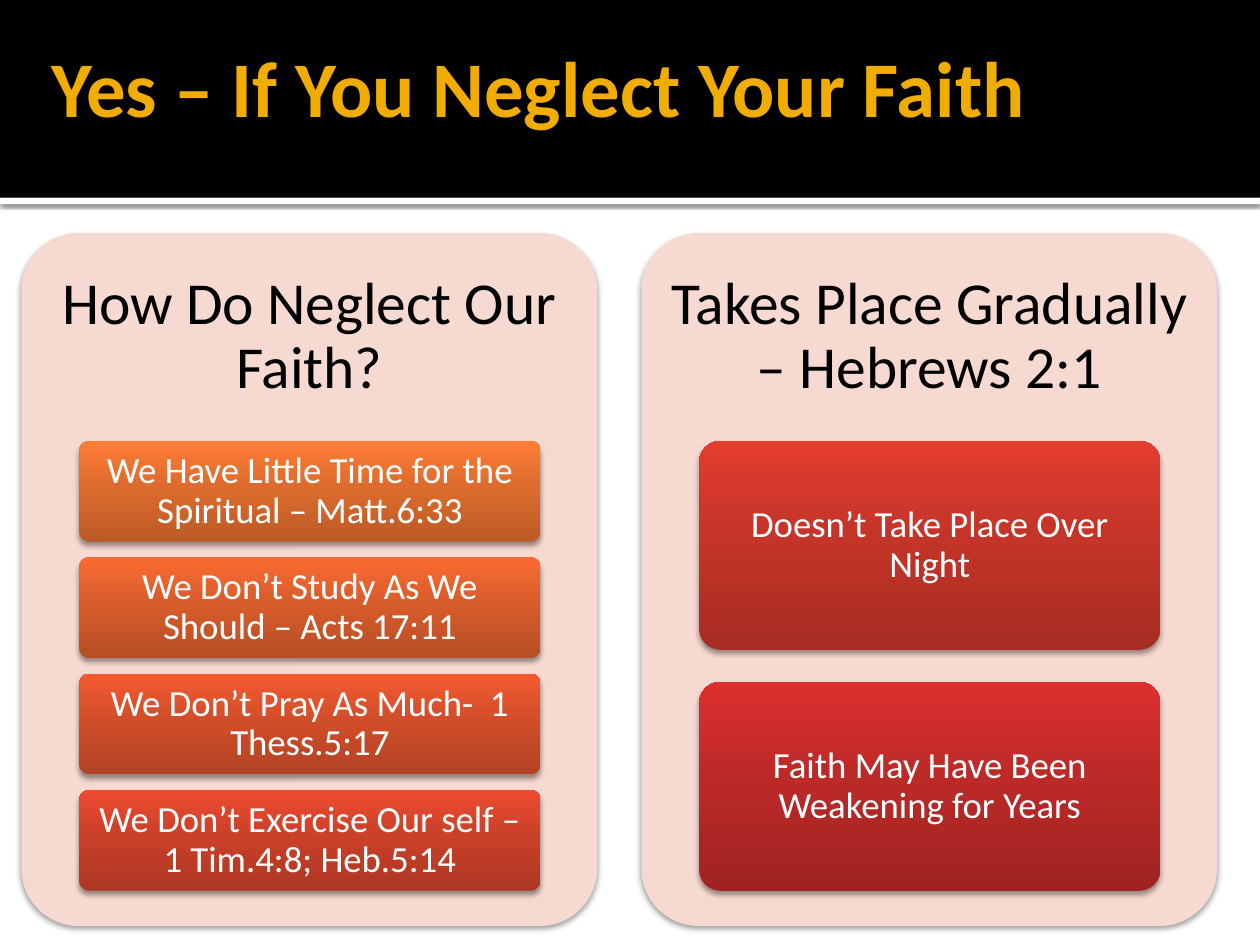
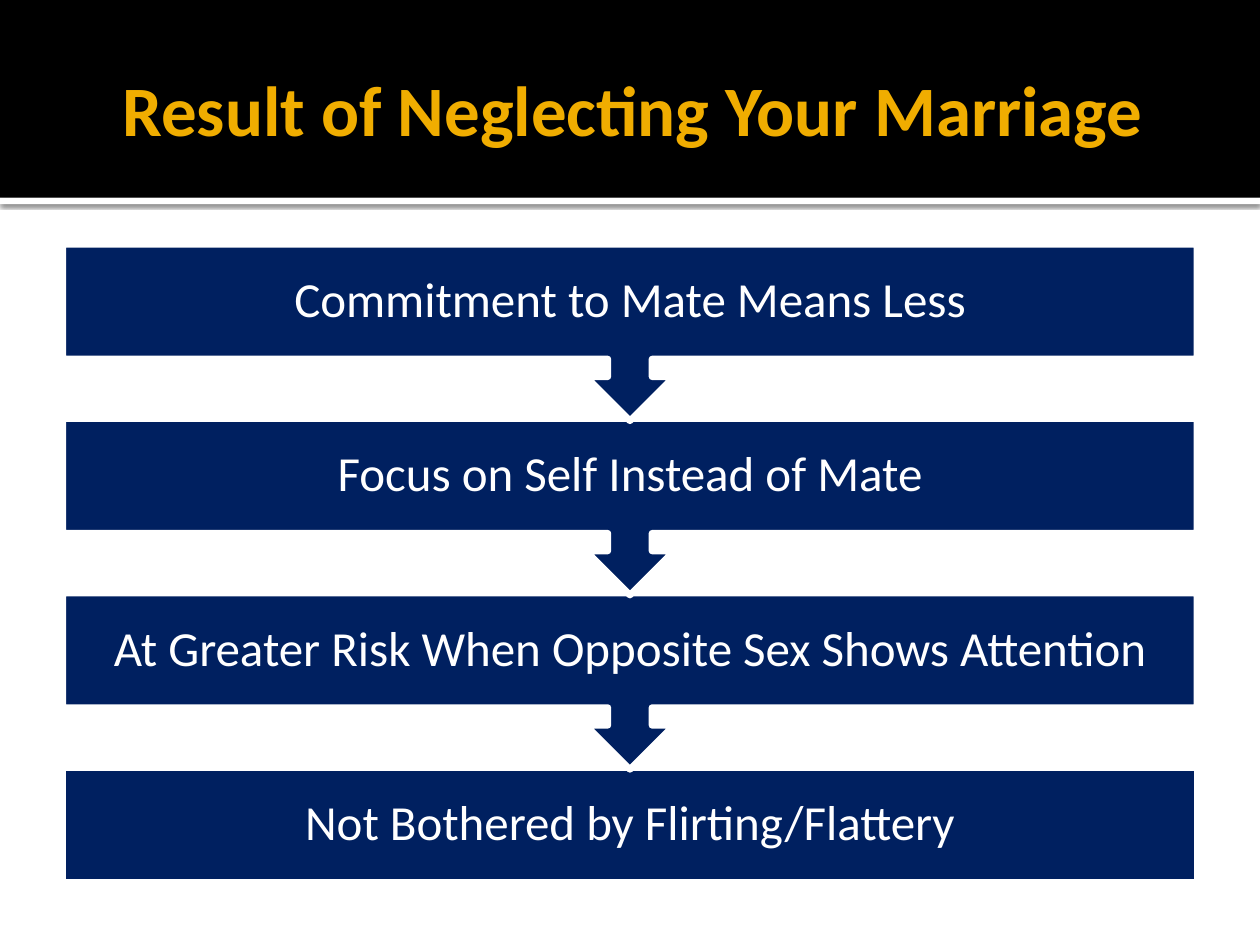
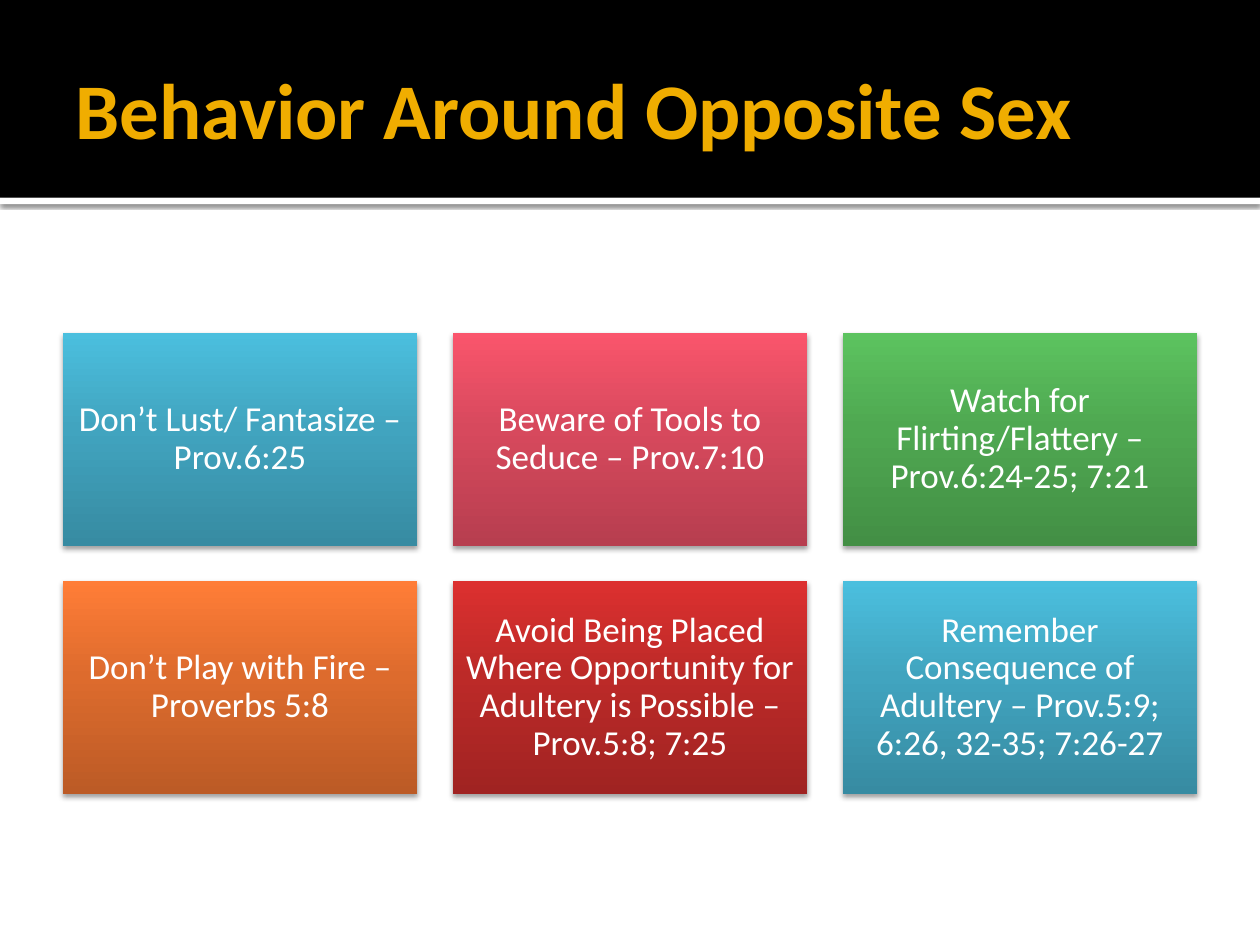
import copy
from typing import Any, NamedTuple, Optional, Union

import lxml.etree
import pptx
import pptx.dml.color
import pptx.enum.shapes
import pptx.enum.text
import pptx.oxml.ns
import pptx.presentation
import pptx.shapes.autoshape
import pptx.slide
import pptx.util

Inches = pptx.util.Inches
Pt = pptx.util.Pt
RGBColor = pptx.dml.color.RGBColor
MSO_SHAPE = pptx.enum.shapes.MSO_SHAPE
PP_ALIGN = pptx.enum.text.PP_ALIGN
qn = pptx.oxml.ns.qn


class Box(NamedTuple):
    """Left, top, width and height in inches."""
    left: float
    top: float
    width: float
    height: float

    def emu(self) -> list[int]:
        return [Inches(v) for v in self]


class Shade(NamedTuple):
    """Vertical gradient, from the bottom up."""
    dark: RGBColor
    mid: RGBColor
    light: RGBColor


class Shadow(NamedTuple):
    alpha: int
    blur: float
    distance: float


class TextStyle(NamedTuple):
    size: float
    color: RGBColor
    inset: tuple[float, float, float, float]
    align: PP_ALIGN = PP_ALIGN.CENTER
    bold: bool = False
    spacing: float = 0.9


class Panel(NamedTuple):
    heading: str
    tiles: list[tuple[str, Shade]]


def shade(dark: str, mid: str, light: str) -> Shade:
    return Shade(*map(RGBColor.from_string, (dark, mid, light)))


# Colours
BLACK = RGBColor(0x00, 0x00, 0x00)
WHITE = RGBColor(0xFF, 0xFF, 0xFF)
GOLD = RGBColor(0xF0, 0xAD, 0x00)
BLUSH = RGBColor(0xF6, 0xD9, 0xD0)
NAVY = RGBColor(0x00, 0x20, 0x60)
ORANGE = shade("BC5B26", "DD6B2D", "FF7D37")
DEEP_ORANGE = shade("B74E25", "D85C2B", "FB6B32")
RUST = shade("B24224", "D24E2A", "F45A31")
VERMILION = shade("AD3723", "CB4029", "ED4B30")
SCARLET = shade("A72C22", "C43428", "E43D2F")
RED = shade("A02322", "BC2A28", "DC302F")
TEAL = shade("378BA2", "41A4BF", "4BBFDE")
ROSE = shade("B73E4F", "D7495D", "FA556C")
GREEN = shade("438F45", "4FA851", "5CC35F")

# Styles
FONT = "Calibri"
STRIP_SHADOW = Shadow(60, 2.5, 0.8)
CARD_SHADOW = Shadow(38, 3.1, 2)
TITLE = TextStyle(45, GOLD, (0.1, 0.05, 0.05, 0.05), PP_ALIGN.LEFT, True, 1.0)
HEADING = TextStyle(34, BLACK, (0.14,) * 4)
TILE = TextStyle(21, WHITE, (0.06, 0.04, 0.06, 0.04))
STEP = TextStyle(28, WHITE, (0.22,) * 4)
CARD = TextStyle(20, WHITE, (0.08,) * 4)
TITLE_BOX = Box(0.5, 0.17, 9, 1.37)

# Slide content
PANELS = [
    Panel("How Do Neglect Our Faith?", [
        ("We Have Little Time for the Spiritual – Matt.6:33", ORANGE),
        ("We Don’t Study As We Should – Acts 17:11", DEEP_ORANGE),
        ("We Don’t Pray As Much-  1 Thess.5:17", RUST),
        ("We Don’t Exercise Our self – 1 Tim.4:8; Heb.5:14", VERMILION),
    ]),
    Panel("Takes Place Gradually – Hebrews 2:1", [
        ("Doesn’t Take Place Over Night", SCARLET),
        ("Faith May Have Been Weakening for Years", RED),
    ]),
]
STEPS = [
    "Commitment to Mate Means Less",
    "Focus on Self Instead of Mate",
    "At Greater Risk When Opposite Sex Shows Attention",
    "Not Bothered by Flirting/Flattery",
]
CARDS = [
    ("Don’t Lust/ Fantasize –Prov.6:25", TEAL),
    ("Beware of Tools to Seduce – Prov.7:10", ROSE),
    ("Watch for Flirting/Flattery – Prov.6:24-25; 7:21", GREEN),
    ("Don’t Play with Fire – Proverbs 5:8", ORANGE),
    ("Avoid Being Placed Where Opportunity for Adultery is Possible – "
     "Prov.5:8; 7:25", RED),
    ("Remember Consequence of Adultery – Prov.5:9; 6:26, 32-35; 7:26-27", TEAL),
]


def set_attrs(obj: Any, values: dict[str, Any]) -> None:
    for name, value in values.items():
        setattr(obj, name, value)


def write(sp: Any, text: str, style: TextStyle) -> None:
    """Put one paragraph of text into a shape or text box."""
    tf = sp.text_frame
    left, top, right, bottom = map(Inches, style.inset)
    set_attrs(tf, {
        "word_wrap": True,
        "vertical_anchor": pptx.enum.text.MSO_ANCHOR.MIDDLE,
        "margin_left": left, "margin_top": top,
        "margin_right": right, "margin_bottom": bottom,
    })
    p = tf.paragraphs[0]
    set_attrs(p, {"alignment": style.align, "line_spacing": style.spacing})
    r = p.add_run()
    r.text = text
    set_attrs(r.font, {"name": FONT, "size": Pt(style.size), "bold": style.bold})
    r.font.color.rgb = style.color


def add_text(s: pptx.slide.Slide, box: Box, text: str, style: TextStyle) -> None:
    write(s.shapes.add_textbox(*box.emu()), text, style)


def fill_gradient(sp: pptx.shapes.autoshape.Shape, colors: Shade) -> None:
    sp.fill.gradient()
    sp.fill.gradient_angle = 90
    stops = sp._element.spPr.find(".//" + qn("a:gsLst"))
    stops.append(copy.deepcopy(stops[0]))
    for stop, position, color in zip(sp.fill.gradient_stops, (0, 0.55, 1), colors):
        stop.position = position
        stop.color.rgb = color


def add_shadow(sp: pptx.shapes.autoshape.Shape, shadow: Shadow) -> None:
    effects = sp._element.spPr.find(qn("a:effectLst"))
    outer = lxml.etree.SubElement(effects, qn("a:outerShdw"), {
        "blurRad": str(Pt(shadow.blur)), "dist": str(Pt(shadow.distance)),
        "dir": "5400000", "rotWithShape": "0",
    })
    color = lxml.etree.SubElement(outer, qn("a:srgbClr"), val=str(BLACK))
    lxml.etree.SubElement(color, qn("a:alpha"), val=str(shadow.alpha * 1000))


def add_shape(s: pptx.slide.Slide, kind: MSO_SHAPE, box: Box,
              fill: Union[RGBColor, Shade],
              shadow: Optional[Shadow] = None) -> pptx.shapes.autoshape.Shape:
    sp = s.shapes.add_shape(kind, *box.emu())
    sp.shadow.inherit = False
    sp.line.fill.background()
    if isinstance(fill, Shade):
        fill_gradient(sp, fill)
    else:
        sp.fill.solid()
        sp.fill.fore_color.rgb = fill
    if shadow:
        add_shadow(sp, shadow)
    if kind == MSO_SHAPE.ROUNDED_RECTANGLE:
        sp.adjustments[0] = 0.1
    return sp


def add_slide(prs: pptx.presentation.Presentation, title: str,
              box: Box = TITLE_BOX, style: TextStyle = TITLE) -> pptx.slide.Slide:
    """Blank slide with the black title band and the white strip below it."""
    s = prs.slides.add_slide(prs.slide_layouts[6])
    add_shape(s, MSO_SHAPE.RECTANGLE, Box(0, 1.57, 10, 0.05), WHITE, STRIP_SHADOW)
    add_shape(s, MSO_SHAPE.RECTANGLE, Box(0, 0, 10, 1.57), BLACK)
    add_text(s, box, title, style)
    return s


def add_panel(s: pptx.slide.Slide, left: float, panel: Panel) -> None:
    """Rounded panel whose tiles share a fixed height, with gaps of 2/13 tile."""
    kind = MSO_SHAPE.ROUNDED_RECTANGLE
    add_shape(s, kind, Box(left, 1.85, 4.57, 5.5), BLUSH, CARD_SHADOW)
    add_text(s, Box(left, 1.85, 4.57, 1.65), panel.heading, HEADING)
    gap_ratio = 2 / 13
    count = len(panel.tiles)
    height = 3.57 / (count + (count - 1) * gap_ratio)
    for i, (text, colors) in enumerate(panel.tiles):
        box = Box(left + 0.46, 3.5 + i * height * (1 + gap_ratio), 3.66, height)
        write(add_shape(s, kind, box, colors, CARD_SHADOW), text, TILE)


def build_faith(prs: pptx.presentation.Presentation) -> None:
    s = add_slide(prs, "Yes – If You Neglect Your Faith", Box(0.31, 0, 9.69, 1.37))
    for i, panel in enumerate(PANELS):
        add_panel(s, 0.17 + i * 4.92, panel)


def build_marriage(prs: pptx.presentation.Presentation) -> None:
    s = add_slide(prs, "Result of Neglecting Your Marriage",
                  style=TITLE._replace(size=40.5, align=PP_ALIGN.CENTER))
    first, last = 1.94, 6.09
    end = len(STEPS) - 1
    # Bottom step first, so that each arrow lies over the step below
    for i in range(end, -1, -1):
        kind, height = MSO_SHAPE.DOWN_ARROW_CALLOUT, 1.4
        if i == end:
            kind, height = MSO_SHAPE.RECTANGLE, 0.91
        top = first + i * (last - first) / end
        sp = add_shape(s, kind, Box(0.5, top, 9, height), NAVY)
        sp.line.color.rgb = WHITE
        sp.line.width = Pt(3.78)
        write(sp, STEPS[i], STEP)


def build_behavior(prs: pptx.presentation.Presentation) -> None:
    s = add_slide(prs, "Behavior Around Opposite Sex")
    for i, (text, colors) in enumerate(CARDS):
        row, col = divmod(i, 3)
        box = Box(0.5 + col * 3.095, 2.64 + row * 1.97, 2.81, 1.69)
        write(add_shape(s, MSO_SHAPE.RECTANGLE, box, colors, CARD_SHADOW), text, CARD)


def main() -> None:
    prs = pptx.Presentation()
    set_attrs(prs, {"slide_width": Inches(10), "slide_height": Inches(7.5)})
    build_faith(prs)
    build_marriage(prs)
    build_behavior(prs)
    prs.save("out.pptx")


if __name__ == "__main__":
    main()
